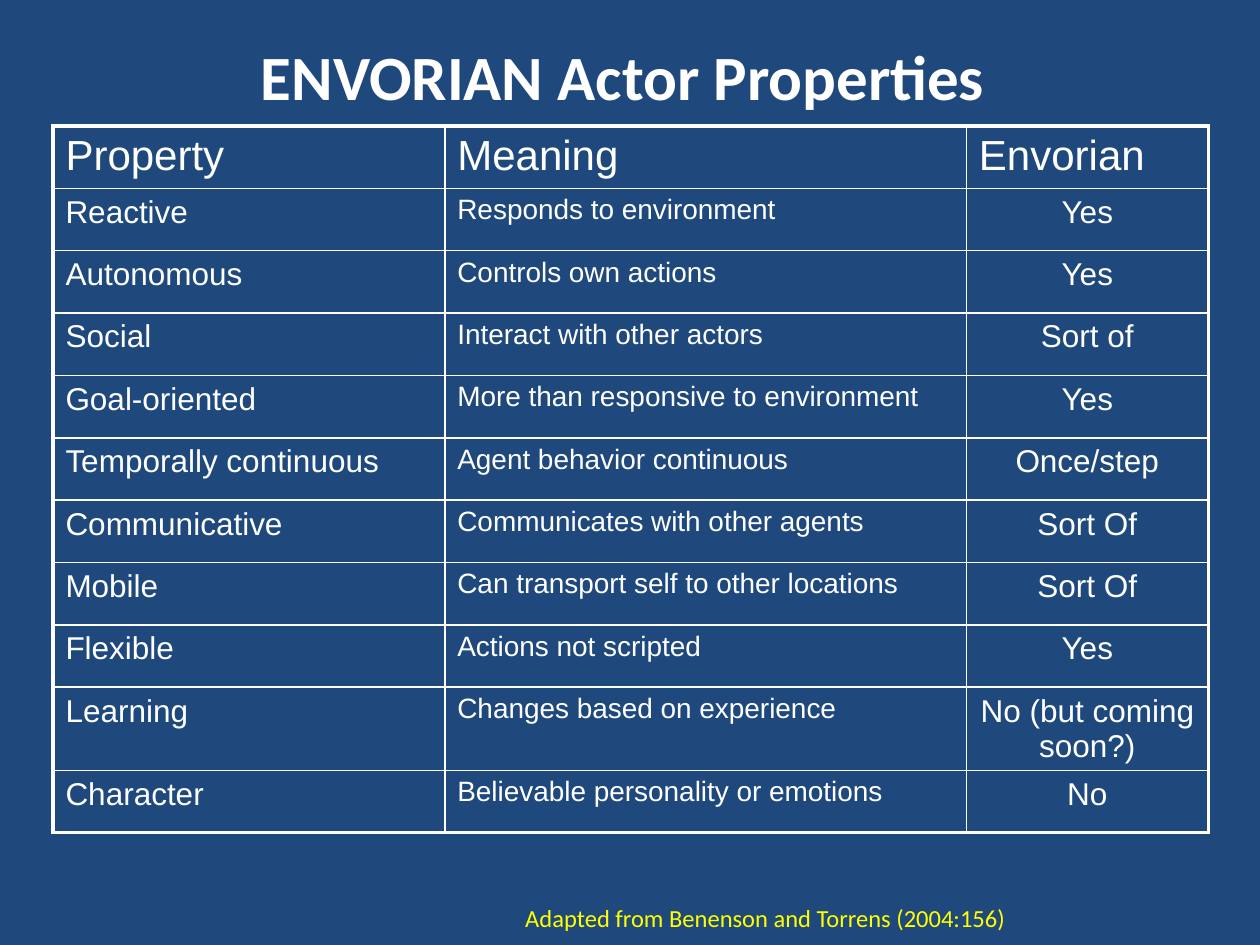
"""Build the ENVORIAN actor properties slide."""
from typing import NamedTuple

import lxml.etree
import pptx
import pptx.dml.color
import pptx.enum.text
import pptx.oxml.ns
import pptx.util

Inches = pptx.util.Inches
Pt = pptx.util.Pt
Align = pptx.enum.text.PP_ALIGN
Anchor = pptx.enum.text.MSO_ANCHOR

COLORS = {"background": "1F497D", "text": "FFFFFF", "credit": "FFFF00"}
COLUMN_WIDTHS = (3.11, 4.14, 1.92)
ROW_HEIGHT = 0.495
OUTER_BORDER, INNER_BORDER = 2.25, 1
HEADINGS = ("Property", "Meaning", "Envorian")


class ActorProperty(NamedTuple):
    name: str
    meaning: str
    support: str


PROPERTIES = [
    ActorProperty("Reactive", "Responds to environment", "Yes"),
    ActorProperty("Autonomous", "Controls own actions", "Yes"),
    ActorProperty("Social", "Interact with other actors", "Sort of"),
    ActorProperty("Goal-oriented", "More than responsive to environment", "Yes"),
    ActorProperty("Temporally continuous", "Agent behavior continuous", "Once/step"),
    ActorProperty("Communicative", "Communicates with other agents", "Sort Of"),
    ActorProperty("Mobile", "Can transport self to other locations", "Sort Of"),
    ActorProperty("Flexible", "Actions not scripted", "Yes"),
    ActorProperty("Learning", "Changes based on experience", "No (but coming soon?)"),
    ActorProperty("Character", "Believable personality or emotions", "No"),
]


def color(name: str) -> pptx.dml.color.RGBColor:
    return pptx.dml.color.RGBColor.from_string(COLORS[name])


def write_text(text_frame, text: str, *, size: float, font: str = "Arial",
               color_name: str = "text", bold: bool = False,
               align=Align.LEFT) -> None:
    paragraph = text_frame.paragraphs[0]
    paragraph.alignment = align
    run = paragraph.add_run()
    run.text = text
    run.font.size = Pt(size)
    run.font.name = font
    run.font.bold = bold
    run.font.color.rgb = color(color_name)


def set_borders(cell, widths: dict[str, float]) -> None:
    properties = cell._tc.get_or_add_tcPr()
    qualified = pptx.oxml.ns.qn
    for side, width in widths.items():
        line = lxml.etree.SubElement(properties, qualified(f"a:ln{side}"), w=str(Pt(width)))
        fill = lxml.etree.SubElement(line, qualified("a:solidFill"))
        lxml.etree.SubElement(fill, qualified("a:srgbClr"), val=COLORS["text"])


def add_property_table(slide) -> None:
    rows = [HEADINGS, *PROPERTIES]
    last_row, last_column = len(rows) - 1, len(HEADINGS) - 1
    table = slide.shapes.add_table(
        len(rows), len(HEADINGS), Inches(0.42), Inches(1),
        Inches(sum(COLUMN_WIDTHS)), Inches(ROW_HEIGHT * len(rows))).table
    table.first_row = table.horz_banding = False
    for column, width in zip(table.columns, COLUMN_WIDTHS):
        column.width = Inches(width)
    for row_index, texts in enumerate(rows):
        table.rows[row_index].height = Inches(ROW_HEIGHT)
        for column_index, text in enumerate(texts):
            cell = table.cell(row_index, column_index)
            is_outer = {"L": column_index == 0, "R": column_index == last_column,
                        "T": row_index == 0, "B": row_index == last_row}
            set_borders(cell, {side: OUTER_BORDER if outer else INNER_BORDER
                               for side, outer in is_outer.items()})
            cell.fill.background()
            is_heading = row_index == 0
            centered = column_index == last_column and not is_heading
            write_text(cell.text_frame, text,
                       size=24 if is_heading else (18, 16, 18)[column_index],
                       align=Align.CENTER if centered else Align.LEFT)


def add_title(slide) -> None:
    title = slide.shapes.title
    title.left, title.top = Inches(0.5), Inches(0.21)
    title.width, title.height = Inches(9), Inches(0.78)
    title.text_frame.vertical_anchor = Anchor.MIDDLE
    write_text(title.text_frame, "ENVORIAN Actor Properties ", size=36,
               font="Calibri", bold=True, align=Align.CENTER)


def add_credit(slide) -> None:
    credit = slide.shapes.add_textbox(Inches(4.07), Inches(7.12), Inches(4.38), Inches(0.33))
    credit.text_frame.word_wrap = False
    credit.text_frame.auto_size = pptx.enum.text.MSO_AUTO_SIZE.SHAPE_TO_FIT_TEXT
    write_text(credit.text_frame, "Adapted from Benenson and Torrens (2004:156)",
               size=14, font="Calibri", color_name="credit")


def main() -> None:
    presentation = pptx.Presentation()
    presentation.slide_width, presentation.slide_height = Inches(10), Inches(7.5)
    slide = presentation.slides.add_slide(presentation.slide_layouts[5])
    slide.background.fill.solid()
    slide.background.fill.fore_color.rgb = color("background")
    add_title(slide)
    add_property_table(slide)
    add_credit(slide)
    presentation.save("out.pptx")


if __name__ == "__main__":
    main()
